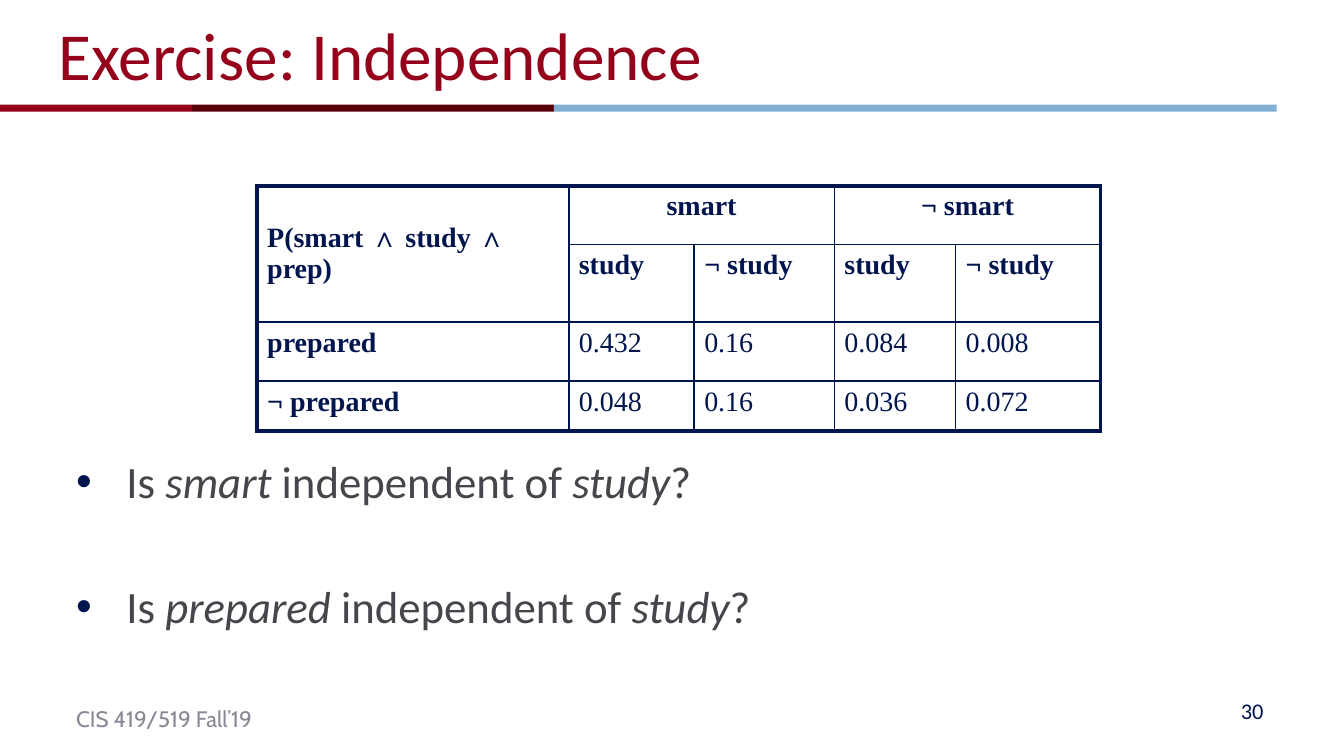
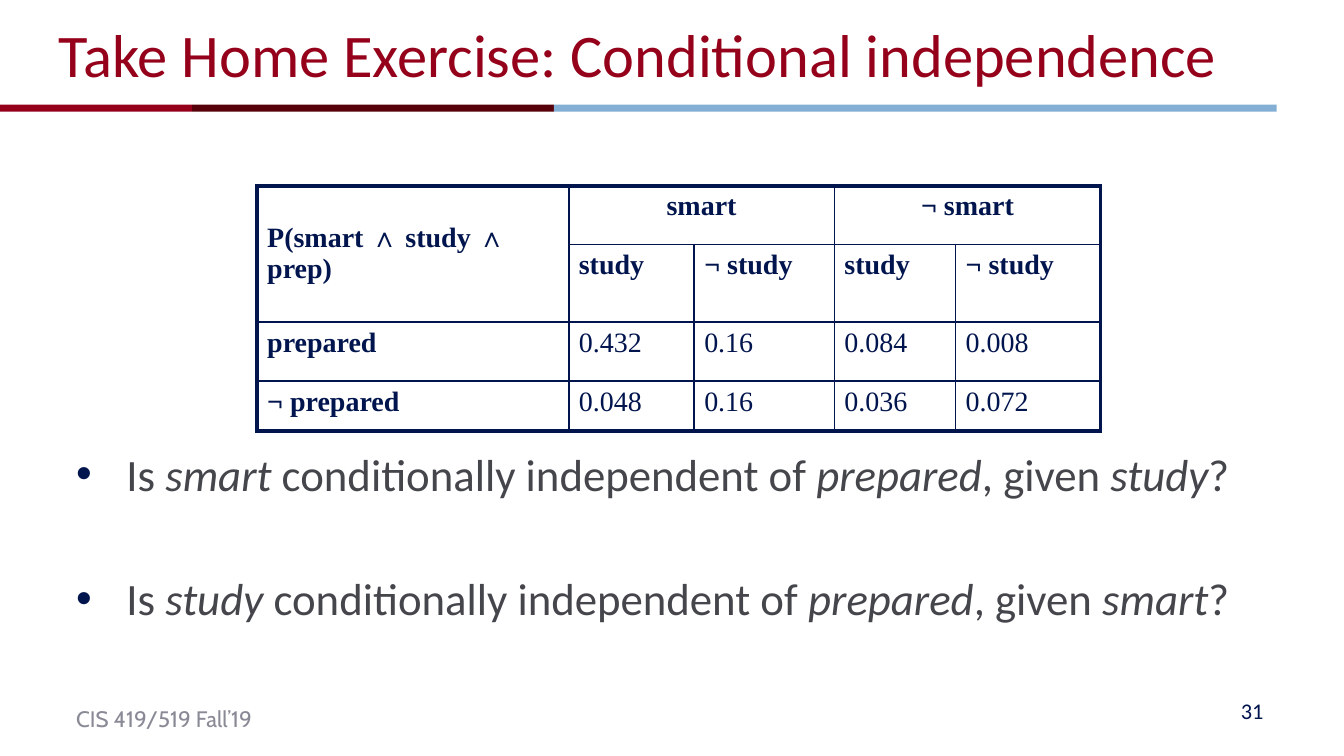
from dataclasses import dataclass

from lxml import etree
from pptx import Presentation
from pptx.dml.color import RGBColor
from pptx.enum.shapes import MSO_SHAPE
from pptx.enum.text import MSO_ANCHOR, PP_ALIGN
from pptx.oxml.ns import qn
from pptx.util import Cm, Pt

RECTANGLE = MSO_SHAPE.RECTANGLE
TOP, MIDDLE = MSO_ANCHOR.TOP, MSO_ANCHOR.MIDDLE
LEFT, CENTER, RIGHT = PP_ALIGN.LEFT, PP_ALIGN.CENTER, PP_ALIGN.RIGHT

RED, MAROON, BLUE = "95001A", "57000A", "82AFD3"
NAVY, SLATE, GRAY = "00144D", "44464B", "898A96"
THIN, THICK = Pt(1), Pt(2.25)


@dataclass(frozen=True)
class Style:
    """Font settings of a piece of text."""
    size: float
    color: str
    font: str = "Calibri"
    bold: bool = False


@dataclass(frozen=True)
class Area:
    """Position and size in centimetres."""
    left: float
    top: float
    width: float
    height: float

    def lengths(self) -> tuple:
        """Return the four values as lengths."""
        return Cm(self.left), Cm(self.top), Cm(self.width), Cm(self.height)


@dataclass(frozen=True)
class Band:
    """One coloured part of the rule under the title."""
    width: float
    color: str


@dataclass(frozen=True)
class Exercise:
    """Content of one page; every second span of a question is italic."""
    number: int
    title: str
    title_size: float
    body_top: float
    questions: tuple


BANDS = (Band(3.63, RED), Band(6.84, MAROON), Band(13.66, BLUE))
BAND_TOP, BAND_HEIGHT = 1.98, 0.13
TITLE_AREA = Area(0.86, 0.05, 22.86, 1.93)
NUMBER_AREA = Area(18.21, 13.06, 5.92, 0.76)
FOOTER_AREA = Area(1.19, 13.21, 3.86, 0.76)
BODY_LEFT, BODY_WIDTH, BODY_BOTTOM = 1.19, 22.86, 12.75
BODY_STYLE = Style(24, SLATE)
QUESTION_GAP = Pt(38)
BULLET_INDENT = Cm(0.95)

TABLE_LEFT, TABLE_TOP = 4.86, 3.51
COLUMN_WIDTHS = (5.89, 2.37, 2.65, 2.29, 2.74)
ROW_HEIGHTS = (1.11, 1.37, 1.11, 0.95)
HEADER_ROWS = 2
MERGES = ((0, 0, 1, 0), (0, 1, 0, 2), (0, 3, 0, 4))
PROBABILITIES = (
    ("P(smart ∧ study ∧ prep)", "smart", "", "¬ smart", ""),
    ("", "study", "¬ study", "study", "¬ study"),
    ("prepared", "0.432", "0.16", "0.084", "0.008"),
    ("¬ prepared", "0.048", "0.16", "0.036", "0.072"),
)

EXERCISES = (
    Exercise(30, "Exercise: Independence", 36, 8.46, (
        ("Is ", "smart", " independent of ", "study", "?"),
        ("Is ", "prepared", " independent of ", "study", "?"),
    )),
    Exercise(31, "Take Home Exercise: Conditional independence", 32.4, 8.31, (
        ("Is ", "smart", " conditionally independent of ", "prepared",
         ", given ", "study", "?"),
        ("Is ", "study", " conditionally independent of ", "prepared",
         ", given ", "smart", "?"),
    )),
)


def rgb(color: str) -> RGBColor:
    """Turn a hex string into a colour."""
    return RGBColor.from_string(color)


def add_span(para, text: str, style: Style, italic: bool = False) -> None:
    """Append one styled run to a paragraph."""
    span = para.add_run()
    span.text = text
    span.font.name = style.font
    span.font.size = Pt(style.size)
    span.font.bold = style.bold
    span.font.italic = italic
    span.font.color.rgb = rgb(style.color)


def add_box(page, area: Area, anchor=TOP, wrap: bool = True):
    """Add an empty text box and return its text frame."""
    frame = page.shapes.add_textbox(*area.lengths()).text_frame
    frame.word_wrap = wrap
    frame.vertical_anchor = anchor
    return frame


def add_label(page, area: Area, text: str, style: Style, anchor=TOP,
              align=LEFT, wrap: bool = True) -> None:
    """Add a text box holding a single line."""
    para = add_box(page, area, anchor, wrap).paragraphs[0]
    para.alignment = align
    add_span(para, text, style)


def add_bands(page) -> None:
    """Draw the coloured bands end to end."""
    left = 0.0
    for band in BANDS:
        area = Area(left, BAND_TOP, band.width, BAND_HEIGHT)
        shape = page.shapes.add_shape(RECTANGLE, *area.lengths())
        shape.shadow.inherit = False
        shape.fill.solid()
        shape.fill.fore_color.rgb = rgb(band.color)
        shape.line.fill.background()
        left += band.width


def add_bullet(para) -> None:
    """Give a paragraph a navy bullet and a hanging indent."""
    properties = para._p.get_or_add_pPr()
    properties.set("marL", str(BULLET_INDENT))
    properties.set("indent", str(-BULLET_INDENT))
    color = etree.SubElement(properties, qn("a:buClr"))
    etree.SubElement(color, qn("a:srgbClr"), val=NAVY)
    etree.SubElement(properties, qn("a:buFont"), typeface="Arial")
    etree.SubElement(properties, qn("a:buChar"), char="•")


def add_questions(page, exercise: Exercise) -> None:
    """Write the bulleted questions."""
    height = BODY_BOTTOM - exercise.body_top
    frame = add_box(page, Area(BODY_LEFT, exercise.body_top, BODY_WIDTH, height))
    for index, question in enumerate(exercise.questions):
        para = frame.add_paragraph() if index else frame.paragraphs[0]
        add_bullet(para)
        if index:
            para.space_before = QUESTION_GAP
        for position, text in enumerate(question):
            add_span(para, text, BODY_STYLE, italic=position % 2 == 1)


def set_borders(cell, row: int, column: int) -> None:
    """Draw thick lines on the outer edge of the table, thin ones inside."""
    last_row = row + cell.span_height == len(ROW_HEIGHTS)
    last_column = column + cell.span_width == len(COLUMN_WIDTHS)
    outer = {"a:lnL": column == 0, "a:lnR": last_column,
             "a:lnT": row == 0, "a:lnB": last_row}
    properties = cell._tc.get_or_add_tcPr()
    for position, (tag, is_outer) in enumerate(outer.items()):
        line = etree.Element(qn(tag), w=str(THICK if is_outer else THIN))
        fill = etree.SubElement(line, qn("a:solidFill"))
        etree.SubElement(fill, qn("a:srgbClr"), val=NAVY)
        properties.insert(position, line)


def fill_cell(cell, row: int, column: int) -> None:
    """Format one cell and write its text."""
    cell.fill.background()
    set_borders(cell, row, column)
    if cell.is_spanned:
        return
    cell.margin_left = cell.margin_right = Cm(0.19)
    cell.margin_top = cell.margin_bottom = Cm(0.1)
    cell.vertical_anchor = MIDDLE if cell.span_height > 1 else TOP
    para = cell.text_frame.paragraphs[0]
    para.alignment = CENTER if cell.span_width > 1 else LEFT
    heading = row < HEADER_ROWS or column == 0
    style = Style(15, NAVY, "Times New Roman", heading)
    add_span(para, PROBABILITIES[row][column], style)


def add_probabilities(page) -> None:
    """Add the joint probability table."""
    area = Area(TABLE_LEFT, TABLE_TOP, sum(COLUMN_WIDTHS), sum(ROW_HEIGHTS))
    table = page.shapes.add_table(
        len(ROW_HEIGHTS), len(COLUMN_WIDTHS), *area.lengths()).table
    table.first_row = table.horz_banding = False
    for column, width in zip(table.columns, COLUMN_WIDTHS):
        column.width = Cm(width)
    for row, height in zip(table.rows, ROW_HEIGHTS):
        row.height = Cm(height)
    for top, left, bottom, right in MERGES:
        table.cell(top, left).merge(table.cell(bottom, right))
    for row in range(len(ROW_HEIGHTS)):
        for column in range(len(COLUMN_WIDTHS)):
            fill_cell(table.cell(row, column), row, column)


def add_page(deck, exercise: Exercise) -> None:
    """Build one exercise page."""
    page = deck.slides.add_slide(deck.slide_layouts[6])
    add_label(page, FOOTER_AREA, "CIS 419/519 Fall’19",
              Style(12, GRAY, "Cabin"), wrap=False)
    add_bands(page)
    add_label(page, NUMBER_AREA, str(exercise.number), Style(12, NAVY),
              MIDDLE, RIGHT)
    add_label(page, TITLE_AREA, exercise.title,
              Style(exercise.title_size, RED), MIDDLE)
    add_questions(page, exercise)
    add_probabilities(page)


def main() -> None:
    """Build and save the deck."""
    deck = Presentation()
    deck.slide_width, deck.slide_height = Cm(25.4), Cm(14.29)
    for exercise in EXERCISES:
        add_page(deck, exercise)
    deck.save("out.pptx")


if __name__ == "__main__":
    main()
